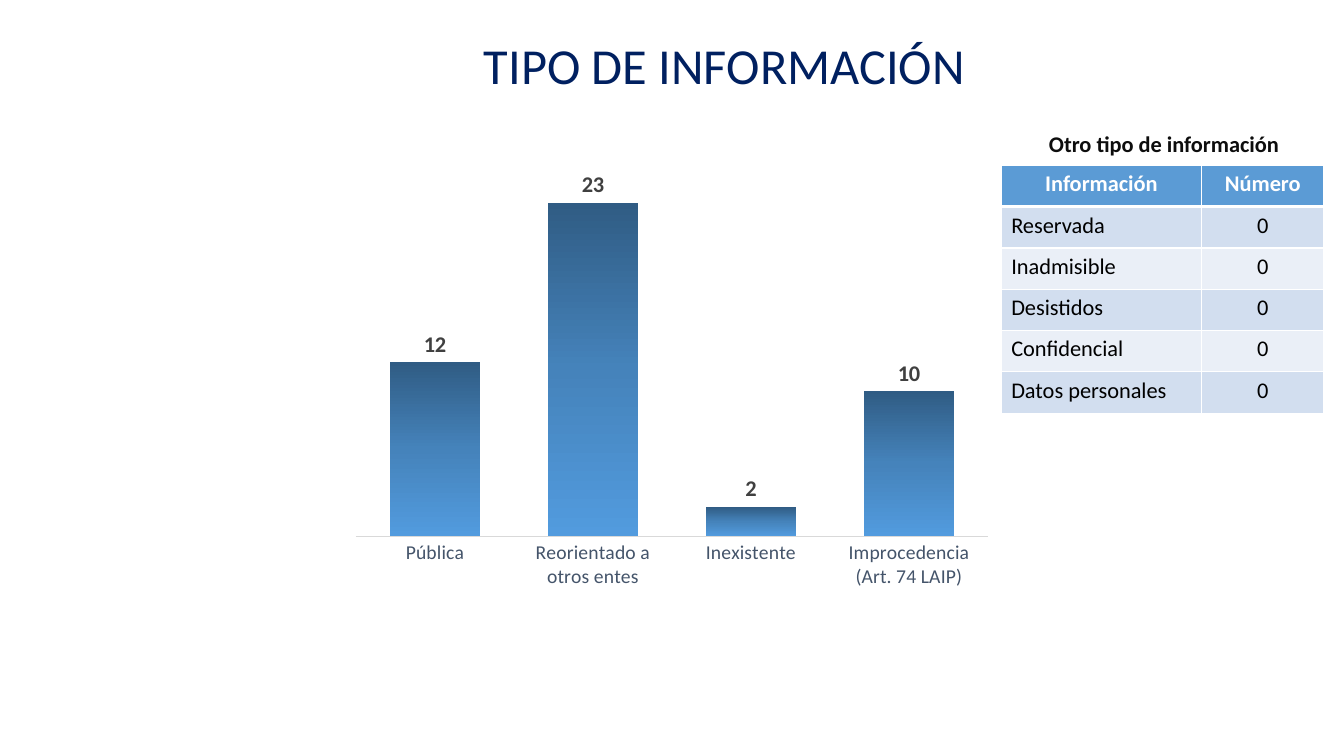
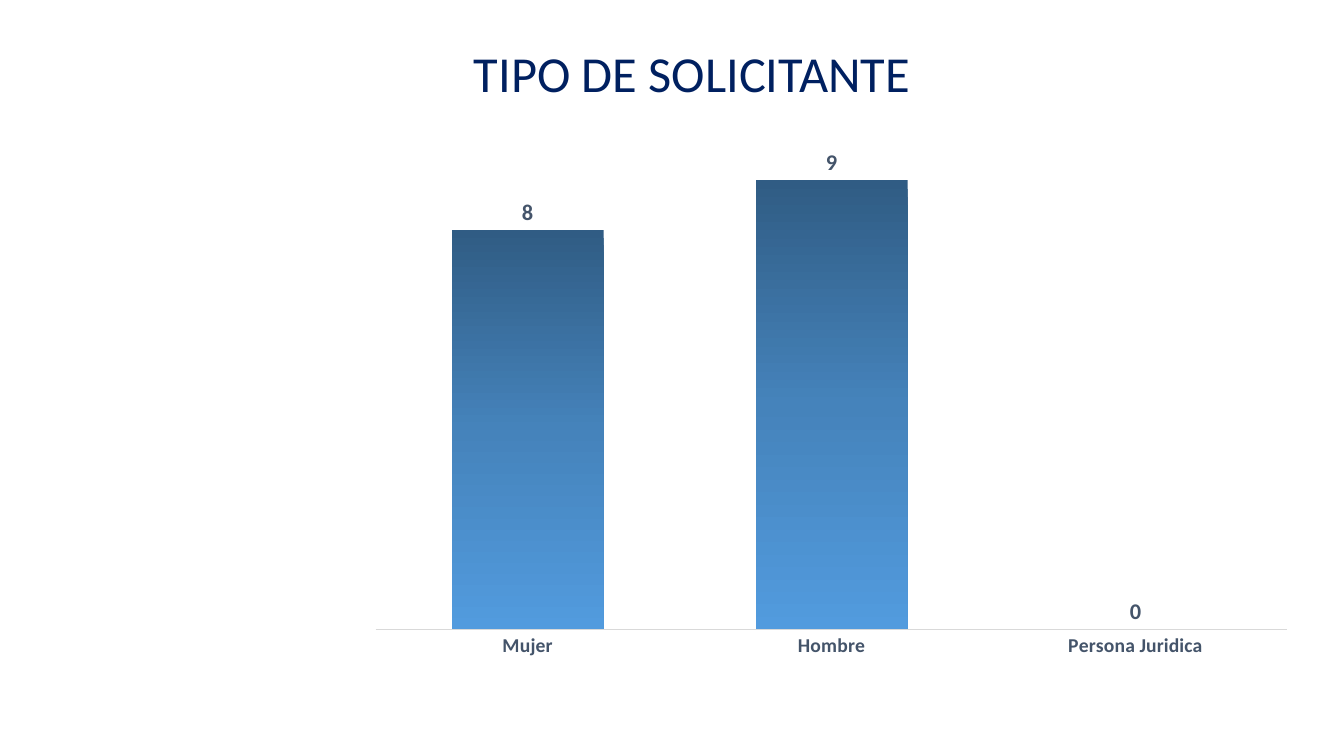
from dataclasses import dataclass

from pptx import Presentation
from pptx.chart.data import CategoryChartData
from pptx.dml.color import RGBColor
from pptx.enum.chart import XL_CHART_TYPE, XL_LABEL_POSITION, XL_TICK_MARK
from pptx.enum.text import MSO_ANCHOR, PP_ALIGN
from pptx.oxml import parse_xml
from pptx.oxml.ns import nsdecls
from pptx.util import Inches, Pt

FONT = "Calibri"
NAVY = "002060"
SLATE = "44546A"
CHARCOAL = "404040"
INK = "0D0D0D"
BLACK = "000000"
WHITE = "FFFFFF"
AXIS_GREY = "D9D9D9"
HEADER_BLUE = "5B9BD5"
ROW_BANDS = ("D2DEEF", "EAEFF7")
BAR_GRADIENT = ((0, "305C84"), (50, "4583BB"), (100, "529BDE"))
TABLE_ROWS = (
    ("Información", "Número"),
    ("Reservada", "0"),
    ("Inadmisible", "0"),
    ("Desistidos", "0"),
    ("Confidencial", "0"),
    ("Datos personales", "0"),
)
COLUMN_WIDTHS = (1.99, 1.21)
ROW_HEIGHT = 0.41


@dataclass(frozen=True)
class Area:
    left: float
    top: float
    width: float
    height: float

    def lengths(self) -> tuple:
        return tuple(Inches(value) for value in (self.left, self.top, self.width, self.height))


@dataclass(frozen=True)
class BarChart:
    area: Area
    plot: Area
    categories: tuple
    values: tuple
    maximum: int
    gap: int
    label_color: str
    bold_categories: bool


@dataclass(frozen=True)
class ChartPage:
    title: str
    title_area: Area
    bars: BarChart


INFORMATION = ChartPage(
    "TIPO DE INFORMACIÓN",
    Area(4.18, 0.29, 6.01, 1.31),
    BarChart(
        Area(3.4, 1.64, 6.53, 4.28),
        Area(0.02, 0.02, 0.96, 0.84),
        ("Pública", "Reorientado a otros entes", "Inexistente", "Improcedencia (Art. 74 LAIP)"),
        (12, 23, 2, 10), 25, 75, CHARCOAL, False,
    ),
)
APPLICANTS = ChartPage(
    "TIPO DE SOLICITANTE",
    Area(4.37, 0.37, 4.99, 1.31),
    BarChart(
        Area(3.72, 1.24, 9.33, 5.5),
        Area(0, 0.01, 0.97, 0.9),
        ("Mujer", "Hombre", "Persona Juridica"),
        (8, 9, 0), 10, 100, SLATE, True,
    ),
)


def color(value: str) -> RGBColor:
    return RGBColor.from_string(value)


def format_font(font, size: float, ink: str, bold: bool = False) -> None:
    font.name = FONT
    font.size = Pt(size)
    font.bold = bold
    font.color.rgb = color(ink)


def write(frame, text: str, *, size: float, ink: str, bold: bool = False,
          align=PP_ALIGN.CENTER) -> None:
    para = frame.paragraphs[0]
    para.alignment = align
    span = para.add_run()
    span.text = text
    format_font(span.font, size, ink, bold)


def add_title(page, text: str, area: Area) -> None:
    title = page.shapes.title
    title.left, title.top, title.width, title.height = area.lengths()
    title.text_frame.vertical_anchor = MSO_ANCHOR.TOP
    title.text_frame.word_wrap = True
    write(title.text_frame, text, size=36, ink=NAVY)


def fill_gradient(series) -> None:
    stops = "".join(
        f'<a:gs pos="{position * 1000}"><a:srgbClr val="{value}"/></a:gs>'
        for position, value in BAR_GRADIENT
    )
    series.format.fill.background()
    properties = series._element.spPr
    properties.replace(properties[0], parse_xml(
        f'<a:gradFill {nsdecls("a")}><a:gsLst>{stops}</a:gsLst>'
        '<a:lin ang="5400000" scaled="0"/></a:gradFill>'
    ))


def place_plot(chart, plot: Area) -> None:
    plot_area = chart._chartSpace.chart.plotArea
    for layout in plot_area.findall(
        "{http://schemas.openxmlformats.org/drawingml/2006/chart}layout"
    ):
        plot_area.remove(layout)
    plot_area.insert(0, parse_xml(
        f'<c:layout {nsdecls("c")}><c:manualLayout><c:layoutTarget val="inner"/>'
        '<c:xMode val="edge"/><c:yMode val="edge"/>'
        f'<c:x val="{plot.left}"/><c:y val="{plot.top}"/>'
        f'<c:w val="{plot.width}"/><c:h val="{plot.height}"/></c:manualLayout></c:layout>'
    ))


def add_bars(page, bars: BarChart) -> None:
    data = CategoryChartData()
    data.categories = bars.categories
    data.add_series("Series 1", bars.values)
    chart = page.shapes.add_chart(
        XL_CHART_TYPE.COLUMN_CLUSTERED, *bars.area.lengths(), data
    ).chart
    chart.has_title = False
    chart.has_legend = False
    format_font(chart.font, 10, BLACK)
    place_plot(chart, bars.plot)

    value_axis = chart.value_axis
    value_axis.visible = False
    value_axis.has_major_gridlines = False
    value_axis.minimum_scale = 0
    value_axis.maximum_scale = bars.maximum

    category_axis = chart.category_axis
    category_axis.major_tick_mark = XL_TICK_MARK.NONE
    category_axis.format.line.color.rgb = color(AXIS_GREY)
    category_axis.format.line.width = Pt(0.75)
    format_font(category_axis.tick_labels.font, 14, SLATE, bars.bold_categories)

    plot = chart.plots[0]
    plot.gap_width = bars.gap
    plot.overlap = -27
    plot.vary_by_categories = False
    plot.has_data_labels = True
    plot.data_labels.show_value = True
    plot.data_labels.position = XL_LABEL_POSITION.OUTSIDE_END
    format_font(plot.data_labels.font, 16, bars.label_color, True)
    fill_gradient(plot.series[0])


def add_borders(cell, bottom: float) -> None:
    properties = cell._tc.get_or_add_tcPr()
    for side, width in (("L", 1), ("R", 1), ("T", 1), ("B", bottom)):
        properties.append(parse_xml(
            f'<a:ln{side} {nsdecls("a")} w="{Pt(width)}"><a:solidFill>'
            f'<a:srgbClr val="{WHITE}"/></a:solidFill></a:ln{side}>'
        ))


def add_information_table(page) -> None:
    area = Area(9.93, 1.64, sum(COLUMN_WIDTHS), ROW_HEIGHT * len(TABLE_ROWS))
    table = page.shapes.add_table(
        len(TABLE_ROWS), len(COLUMN_WIDTHS), *area.lengths()
    ).table
    for column, width in zip(table.columns, COLUMN_WIDTHS):
        column.width = Inches(width)
    for row_index, texts in enumerate(TABLE_ROWS):
        header = row_index == 0
        band = HEADER_BLUE if header else ROW_BANDS[(row_index - 1) % 2]
        for column_index, text in enumerate(texts):
            cell = table.cell(row_index, column_index)
            add_borders(cell, 3 if header else 1)
            cell.fill.solid()
            cell.fill.fore_color.rgb = color(band)
            centred = header or column_index == 1
            write(cell.text_frame, text, size=16, ink=WHITE if header else BLACK,
                  bold=header, align=PP_ALIGN.CENTER if centred else PP_ALIGN.LEFT)


def add_table_heading(page) -> None:
    box = page.shapes.add_textbox(*Area(9.97, 1.24, 3.15, 0.37).lengths())
    box.text_frame.word_wrap = True
    write(box.text_frame, "Otro tipo de información", size=16, ink=INK, bold=True)


def add_chart_page(deck, content: ChartPage):
    page = deck.slides.add_slide(deck.slide_layouts.get_by_name("Title Only"))
    add_title(page, content.title, content.title_area)
    add_bars(page, content.bars)
    return page


def main() -> None:
    deck = Presentation()
    deck.slide_width = Inches(13.33)
    deck.slide_height = Inches(7.5)
    information_page = add_chart_page(deck, INFORMATION)
    add_table_heading(information_page)
    add_information_table(information_page)
    add_chart_page(deck, APPLICANTS)
    deck.save("out.pptx")


if __name__ == "__main__":
    main()
